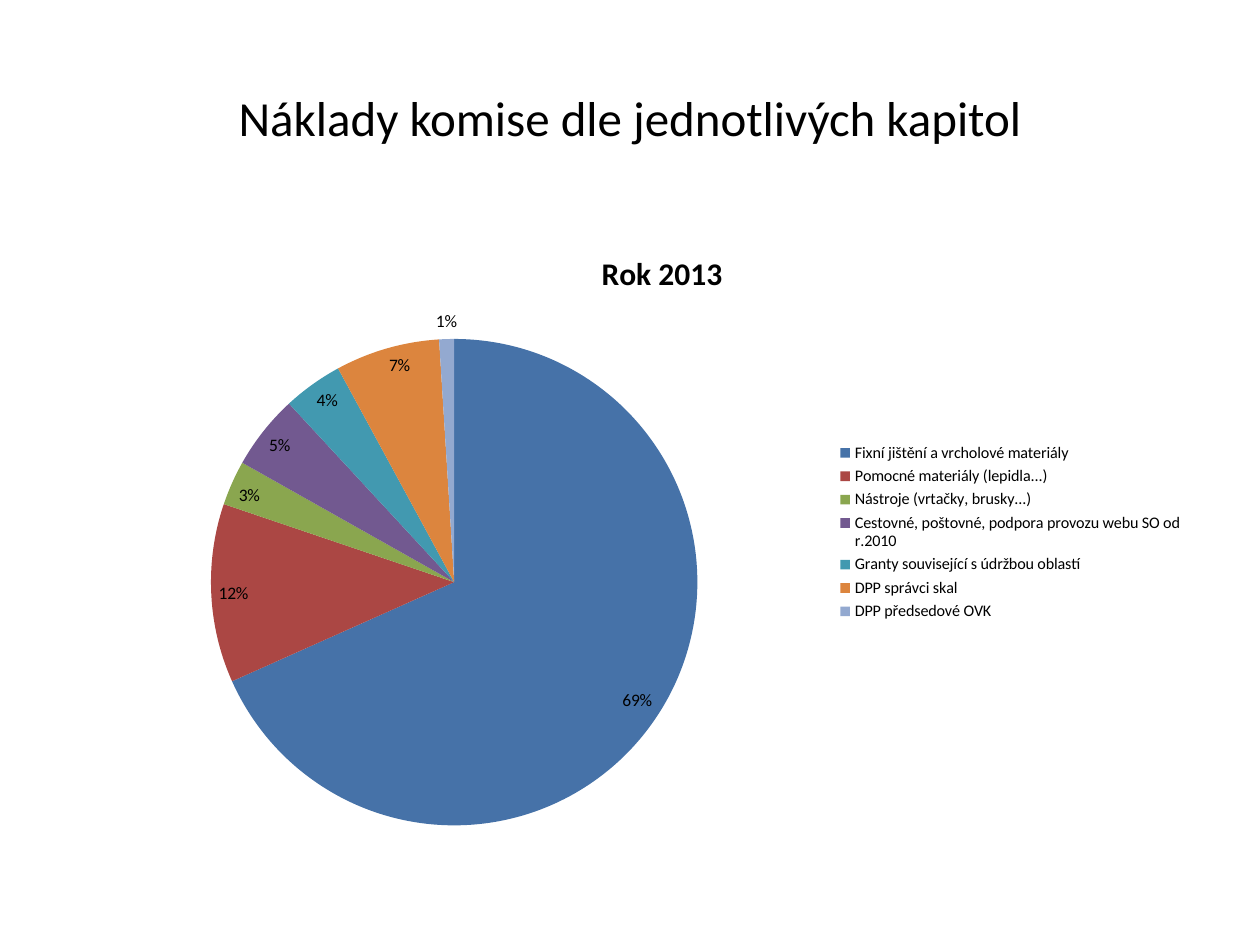
"""Build a slide with a pie chart of commission costs by chapter."""
from copy import deepcopy

from pptx import Presentation
from pptx.chart.data import CategoryChartData
from pptx.dml.color import RGBColor
from pptx.enum.chart import XL_CHART_TYPE, XL_LABEL_POSITION, XL_LEGEND_POSITION
from pptx.enum.text import MSO_ANCHOR, PP_ALIGN
from pptx.oxml import parse_xml
from pptx.oxml.ns import nsdecls, qn
from pptx.util import Inches, Pt

FONT = "Calibri"
BLACK = RGBColor(0x00, 0x00, 0x00)
BLUE = RGBColor(0x46, 0x72, 0xA8)
RED = RGBColor(0xAB, 0x47, 0x44)
GREEN = RGBColor(0x8A, 0xA6, 0x4F)
PURPLE = RGBColor(0x72, 0x59, 0x90)
TEAL = RGBColor(0x42, 0x99, 0xB0)
ORANGE = RGBColor(0xDC, 0x85, 0x3E)
PALE_BLUE = RGBColor(0x93, 0xA9, 0xD0)

COSTS = [
    ("Fixní jištění a vrcholové materiály", 69, BLUE),
    ("Pomocné materiály (lepidla...)", 12, RED),
    ("Nástroje (vrtačky, brusky...)", 3, GREEN),
    ("Cestovné, poštovné, podpora provozu webu SO od r.2010", 5, PURPLE),
    ("Granty související s údržbou oblastí", 4, TEAL),
    ("DPP správci skal", 7, ORANGE),
    ("DPP předsedové OVK", 1, PALE_BLUE),
]


def style_font(font, size, bold=False):
    font.name, font.size, font.bold = FONT, Pt(size), bold
    font.color.rgb = BLACK


def place(part, index, target="", **shares):
    for old_layout in part.findall(qn("c:layout")):
        part.remove(old_layout)
    modes = "".join(f'<c:{side}Mode val="edge"/>' for side in "xy")
    sizes = "".join(f'<c:{key} val="{share}"/>' for key, share in shares.items())
    part.insert(index, parse_xml(
        f'<c:layout {nsdecls("c")}><c:manualLayout>{target}{modes}{sizes}'
        "</c:manualLayout></c:layout>"))


prs = Presentation()
prs.slide_width, prs.slide_height = Inches(10), Inches(7.5)
width, height = prs.slide_width, prs.slide_height
slide = prs.slides.add_slide(prs.slide_layouts[6])
margin, content_width = int(width * 0.05), int(width * 0.9)

heading = slide.shapes.add_textbox(
    margin, int(height * 0.04), content_width, Inches(1.25)).text_frame
heading.word_wrap = True
heading.vertical_anchor = MSO_ANCHOR.MIDDLE
heading.paragraphs[0].alignment = PP_ALIGN.CENTER
heading_run = heading.paragraphs[0].add_run()
heading_run.text = "Náklady komise dle jednotlivých kapitol"
style_font(heading_run.font, 28)

data = CategoryChartData()
data.categories = [chapter for chapter, _, _ in COSTS]
data.add_series("Rok 2013", [share for _, share, _ in COSTS])
pie = slide.shapes.add_chart(
    XL_CHART_TYPE.PIE, margin, Inches(1.75), content_width,
    int(height * 0.66), data).chart
style_font(pie.font, 10)

pie.has_title = True
year_run = pie.chart_title.text_frame.paragraphs[0].add_run()
year_run.text = "Rok 2013"
style_font(year_run.font, 18, bold=True)

pie.has_legend = True
pie.legend.position = XL_LEGEND_POSITION.RIGHT
pie.legend.include_in_layout = False
style_font(pie.legend.font, 9.2)

pie.plots[0].vary_by_categories = True
series = pie.plots[0].series[0]
labels = series.data_labels
labels.show_value = True
labels.number_format = '0"%"'
labels.number_format_is_linked = False
labels.position = XL_LABEL_POSITION.INSIDE_END
style_font(labels.font, 10)
for index, (_, _, color) in enumerate(COSTS):
    wedge = series.points[index].format
    wedge.fill.solid()
    wedge.fill.fore_color.rgb = color
    wedge.line.fill.background()

smallest_label = series.points[len(COSTS) - 1].data_label
style_font(smallest_label.font, 10)
smallest_label.position = XL_LABEL_POSITION.OUTSIDE_END
labels_xml = labels._element
labels_xml.find(qn("c:dLbl")).insert(1, deepcopy(labels_xml.find(qn("c:numFmt"))))

chart_xml = pie._chartSpace.chart
place(chart_xml.find(qn("c:title")), 1, x=0.47, y=0.04)
place(chart_xml.plotArea, 0, '<c:layoutTarget val="inner"/>',
      x=0.13, y=0.19, w=0.43, h=0.78)
place(chart_xml.find(qn("c:legend")), 1, x=0.68, y=0.35, w=0.31, h=0.3)

prs.save("out.pptx")
